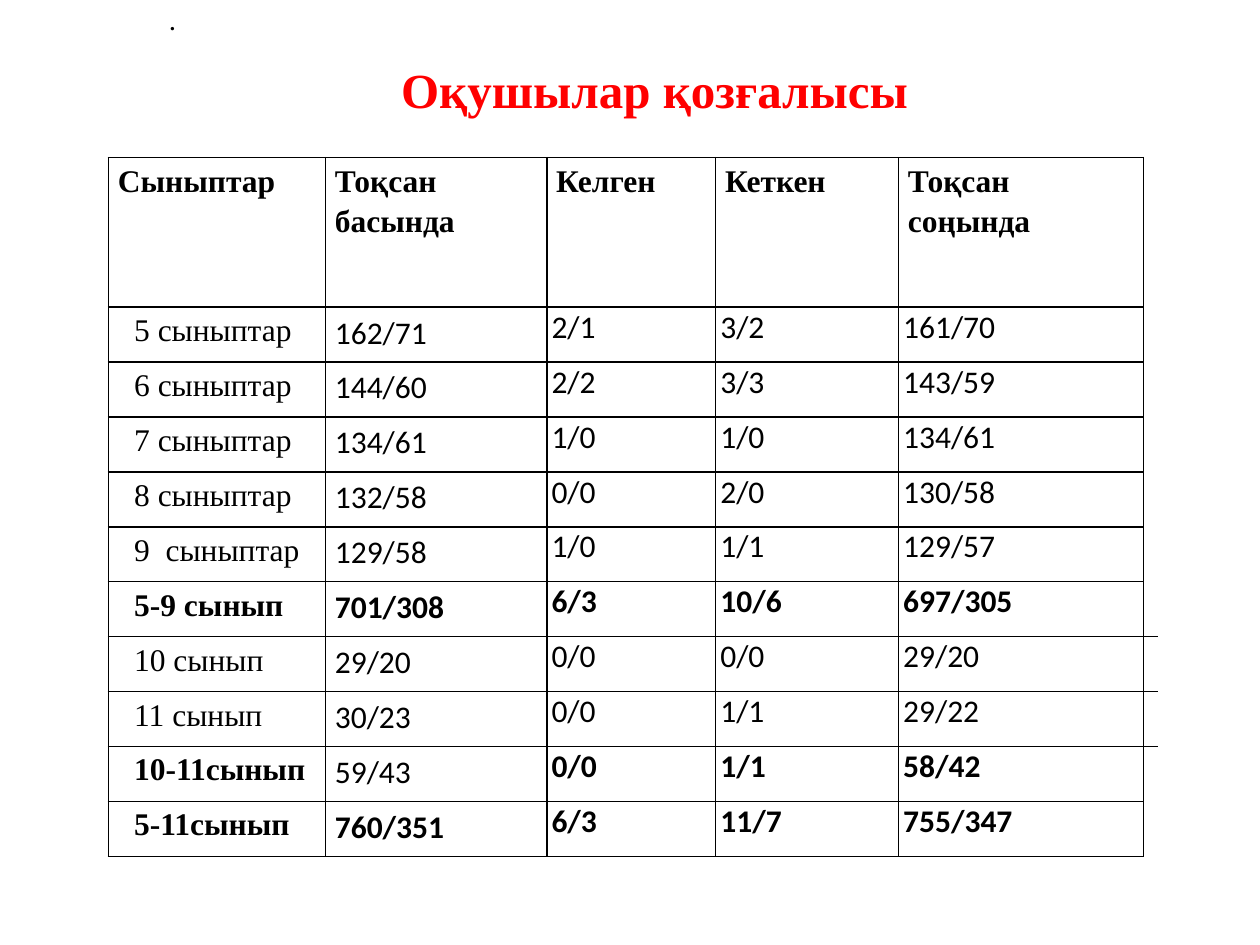
"""Build a slide with a table of pupil movement by class."""
from lxml.etree import SubElement
from pptx import Presentation
from pptx.dml.color import RGBColor
from pptx.enum.text import MSO_ANCHOR, PP_ALIGN
from pptx.oxml import parse_xml
from pptx.oxml.ns import nsdecls, qn
from pptx.util import Pt

SERIF, SANS = "Times New Roman", "Calibri"
BLACK, RED = "000000", "FF0000"
COLUMN_WIDTHS = [124, 126.5, 96.5, 104.5, 140, 4.5]
HEADER_HEIGHT, ROW_HEIGHT = 85.5, 31.4
NO_STYLE = "{2D5ABB26-0587-4C30-8999-92F81FD0307C}"
HEADERS = ["Сыныптар", "Тоқсан басында", "Келген", "Кеткен", "Тоқсан соңында"]
ROWS = [
    ["5 сыныптар", "162/71", "2/1", "3/2", "161/70"],
    ["6 сыныптар", "144/60", "2/2", "3/3", "143/59"],
    ["7 сыныптар", "134/61", "1/0", "1/0", "134/61"],
    ["8 сыныптар", "132/58", "0/0", "2/0", "130/58"],
    ["9  сыныптар", "129/58", "1/0", "1/1", "129/57"],
    ["5-9 сынып", "701/308", "6/3", "10/6", "697/305"],
    ["10 сынып", "29/20", "0/0", "0/0", "29/20"],
    ["11 сынып", "30/23", "0/0", "1/1", "29/22"],
    ["10-11сынып", "59/43", "0/0", "1/1", "58/42"],
    ["5-11сынып", "760/351", "6/3", "11/7", "755/347"],
]
TOTALS = {"5-9 сынып", "10-11сынып", "5-11сынып"}
EDGE_SIDES = {6: "LB", 7: "LTB", 8: "LT"}


def write(para, text, *, size=18, font=SERIF, color=BLACK, bold=False,
          align=PP_ALIGN.LEFT, indent=0, line_spacing=1.0):
    para.alignment = align
    para.line_spacing = line_spacing
    if indent:
        para._p.get_or_add_pPr().set("marL", str(Pt(indent)))
    span = para.add_run()
    span.text = text
    span.font.size = Pt(size)
    span.font.name = font
    span.font.bold = bold
    span.font.color.rgb = RGBColor.from_string(color)


def add_borders(cell, sides):
    properties = cell._tc.get_or_add_tcPr()
    for position, side in enumerate(sides):
        properties.insert(position, parse_xml(
            f'<a:ln{side} {nsdecls("a")} w="{Pt(1)}"><a:solidFill>'
            f'<a:srgbClr val="{BLACK}"/></a:solidFill></a:ln{side}>'))


deck = Presentation()
deck.slide_width, deck.slide_height = Pt(720), Pt(540)
page = deck.slides.add_slide(deck.slide_layouts[6])

frame = page.shapes.add_table(
    len(ROWS) + 1, len(COLUMN_WIDTHS), Pt(62), Pt(90),
    Pt(sum(COLUMN_WIDTHS)), Pt(HEADER_HEIGHT + ROW_HEIGHT * len(ROWS)))
table = frame.table
table.first_row = table.horz_banding = False
table_properties = table._tbl.tblPr
for style in table_properties.findall(qn("a:tableStyleId")):
    table_properties.remove(style)
SubElement(table_properties, qn("a:tableStyleId")).text = NO_STYLE

for column, width in zip(table.columns, COLUMN_WIDTHS):
    column.width = Pt(width)
for row_index, values in enumerate([HEADERS] + ROWS):
    header = row_index == 0
    table.rows[row_index].height = Pt(HEADER_HEIGHT if header else ROW_HEIGHT)
    for column_index in range(len(COLUMN_WIDTHS)):
        cell = table.cell(row_index, column_index)
        cell.margin_left = cell.margin_right = Pt(2.7)
        cell.margin_top, cell.margin_bottom = Pt(0.7), Pt(0)
        cell.fill.background()
        if column_index == len(HEADERS):
            add_borders(cell, EDGE_SIDES.get(row_index, "L"))
            continue
        add_borders(cell, "LRTB")
        justified = header or column_index < 2
        label = column_index == 0 and not header
        plain_total = values[0] == "10-11сынып" and column_index == 1
        write(cell.text_frame.paragraphs[0], values[column_index],
              font=SERIF if header or label else SANS,
              bold=header or (values[0] in TOTALS and not plain_total),
              align=PP_ALIGN.JUSTIFY if justified else PP_ALIGN.LEFT,
              indent=12 if label else 2.7 if justified else 0,
              line_spacing=1.15 if justified else 1.0)

box = page.shapes.add_textbox(Pt(90), Pt(0), Pt(568), Pt(92))
title = box.text_frame
title.word_wrap = True
title.vertical_anchor = MSO_ANCHOR.TOP
title.margin_top = Pt(5.5)
write(title.paragraphs[0], ".", size=12, bold=True)
para = title.add_paragraph()
para.space_before = Pt(14)
write(para, "Оқушылар қозғалысы", size=28, color=RED, bold=True,
      align=PP_ALIGN.CENTER)

deck.save("out.pptx")
